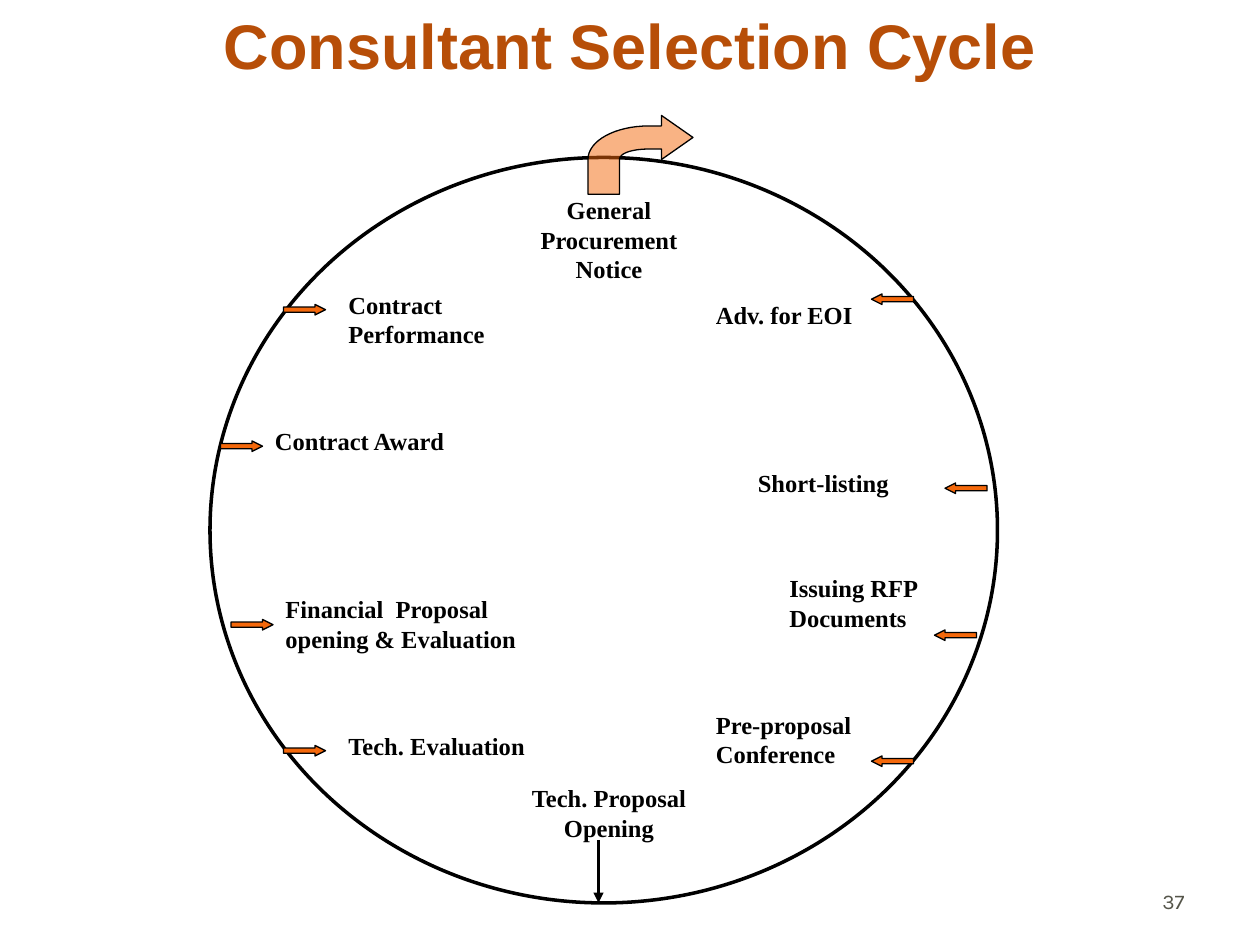
from lxml.etree import SubElement
from pptx import Presentation
from pptx.dml.color import RGBColor
from pptx.enum.shapes import MSO_CONNECTOR, MSO_SHAPE
from pptx.enum.text import MSO_ANCHOR, PP_ALIGN
from pptx.oxml.ns import qn
from pptx.util import Inches, Pt

COLORS = {"ink": "000000", "title": "B74E08", "arrow": "F4680B", "number": "55554A"}
COLS, ROWS = 120, 90
FORMATS = {
    "title": {"name": "Arial", "size": Pt(36), "bold": True},
    "ink": {"name": "Times New Roman", "size": Pt(14), "bold": True},
    "number": {"name": "Karla", "size": Pt(12), "bold": False},
}
LEFT, CENTER, RIGHT = PP_ALIGN.LEFT, PP_ALIGN.CENTER, PP_ALIGN.RIGHT

CYCLE = (20, 15, 75, 71)
STEPS = [
    ("General Procurement Notice", 47, 18, 22, 9.7, CENTER),
    ("Adv. for EOI", 67, 28, 18, 4, LEFT),
    ("Short-listing", 71, 44, 18, 4, LEFT),
    ("Issuing RFP Documents", 74, 54, 18, 6.8, LEFT),
    ("Pre-proposal Conference", 67, 67, 18, 6.8, LEFT),
    ("Tech. Proposal Opening", 46, 74, 24, 6.8, CENTER),
    ("Tech. Evaluation", 32, 69, 21, 4, LEFT),
    ("Financial  Proposal opening & Evaluation", 26, 56, 28, 6.8, LEFT),
    ("Contract Award", 25, 40, 21, 4, LEFT),
    ("Contract Performance", 32, 27, 21, 6.8, LEFT),
]
ARROWS = {
    MSO_SHAPE.RIGHT_ARROW: [(21, 42), (22, 59), (27, 71), (27, 29)],
    MSO_SHAPE.LEFT_ARROW: [(90, 46), (83, 28), (89, 60), (83, 72)],
}
ARROW_SIZE = (4, 1)
HEAD = [(63, 12), (63, 15.2), (66, 13.1), (63, 11), (63, 12)]
OUTER_BEND = [(61.8, 12), (58.6, 12), (56, 13.4), (56, 15.2)]
STEM = [(56, 18.5), (59, 18.5)]
INNER_BEND = [(59, 15.2), (59, 14.6), (60.2, 14.2), (61.8, 14.2)]
NECK = [(63, 14.2)]
EXIT = [(57, 80), (57, 86)]

prs = Presentation()
prs.slide_width, prs.slide_height = Inches(10), Inches(7.5)
s = prs.slides.add_slide(prs.slide_layouts[6])


def grid(x, y):
    return round(x * prs.slide_width / COLS), round(y * prs.slide_height / ROWS)


def bezier(points, steps=16):
    for i in range(steps + 1):
        t = i / steps
        weights = ((1 - t) ** 3, 3 * t * (1 - t) ** 2, 3 * t * t * (1 - t), t ** 3)
        yield tuple(sum(w * p[axis] for w, p in zip(weights, points)) for axis in (0, 1))


def rgb(key):
    return RGBColor.from_string(COLORS[key])


def style(sp, width, fill=None):
    sp.shadow.inherit = False
    sp.line.color.rgb = rgb("ink")
    sp.line.width = Pt(width)
    if fill:
        sp.fill.solid()
        sp.fill.fore_color.rgb = rgb(fill)
    else:
        sp.fill.background()


def add_text(text, x, y, w, h, align, key="ink", anchor=MSO_ANCHOR.TOP):
    tf = s.shapes.add_textbox(*grid(x, y), *grid(w, h)).text_frame
    tf.word_wrap = True
    tf.vertical_anchor = anchor
    p = tf.paragraphs[0]
    p.alignment = align
    r = p.add_run()
    r.text = text
    r.font.color.rgb = rgb(key)
    for name, value in FORMATS[key].items():
        setattr(r.font, name, value)


x, y, w, h = CYCLE
style(s.shapes.add_shape(MSO_SHAPE.OVAL, *grid(x, y), *grid(w, h)), 2)

outline = [grid(*pt) for pt in HEAD[1:] + [*bezier(OUTER_BEND)] + STEM + [*bezier(INNER_BEND)] + NECK]
builder = s.shapes.build_freeform(*outline[0])
builder.add_line_segments(outline[1:], close=True)
start = builder.convert_to_shape()
style(start, 0.75, "arrow")
color = start.fill._xPr.find(qn("a:solidFill"))[0]
SubElement(color, qn("a:alpha"), val="50000")

exit_line = s.shapes.add_connector(MSO_CONNECTOR.STRAIGHT, *grid(*EXIT[0]), *grid(*EXIT[1]))
exit_line.line.color.rgb = rgb("ink")
exit_line.line.width = Pt(1.5)
SubElement(exit_line.line._get_or_add_ln(), qn("a:tailEnd"), type="triangle")
SubElement(exit_line._element.spPr, qn("a:effectLst"))

for kind, places in ARROWS.items():
    for place in places:
        sp = s.shapes.add_shape(kind, *grid(*place), *grid(*ARROW_SIZE))
        sp.adjustments[0], sp.adjustments[1] = 0.5, 1
        style(sp, 0.75, "arrow")

for step in STEPS:
    add_text(*step)
add_text("Consultant Selection Cycle", 6, 0, 108, 11, CENTER, "title")
add_text("37", 86, 83.4, 28, 4.8, RIGHT, "number", MSO_ANCHOR.MIDDLE)

prs.save("out.pptx")
